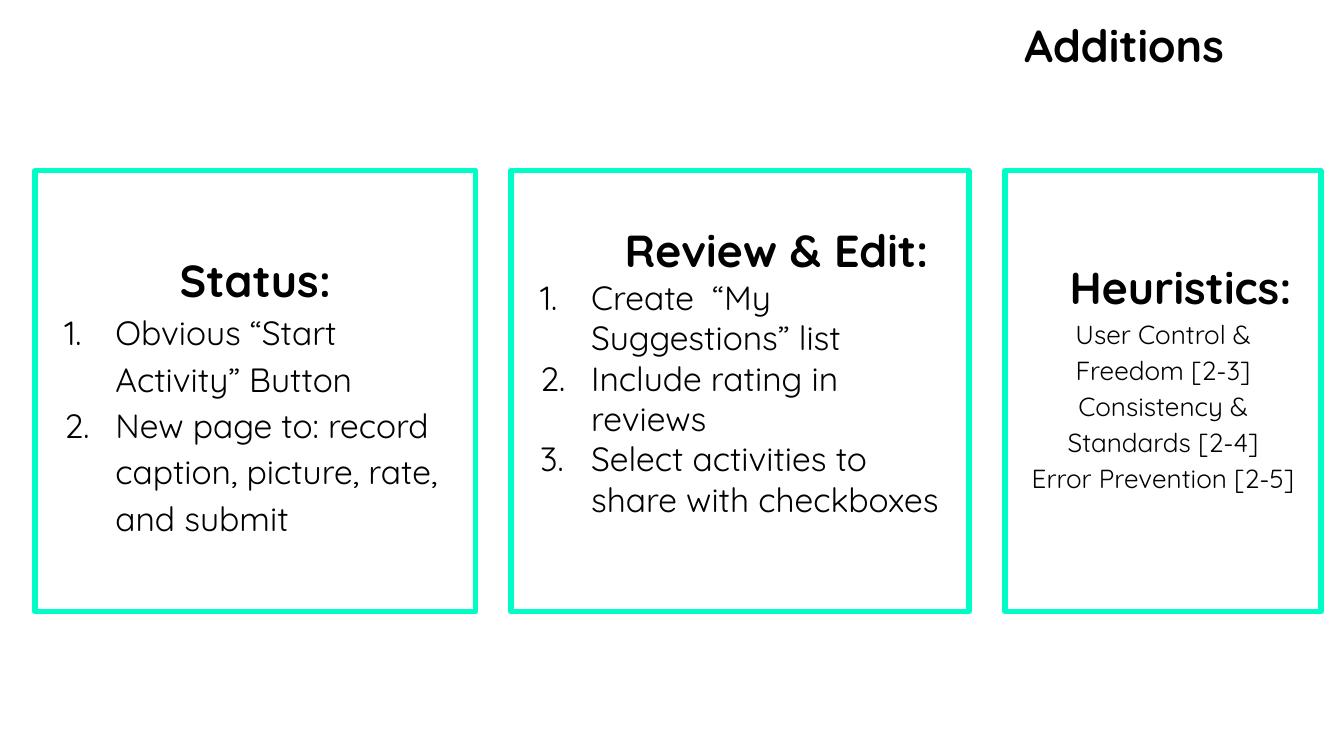
from lxml import etree
from pptx import Presentation
from pptx.dml.color import RGBColor
from pptx.enum.shapes import MSO_SHAPE
from pptx.enum.text import MSO_ANCHOR, MSO_AUTO_SIZE, PP_ALIGN
from pptx.oxml.ns import qn
from pptx.util import Inches, Pt

LEFT, CENTER = PP_ALIGN.LEFT, PP_ALIGN.CENTER
TOP, MIDDLE = MSO_ANCHOR.TOP, MSO_ANCHOR.MIDDLE
RECTANGLE = MSO_SHAPE.RECTANGLE
NO_AUTOFIT = MSO_AUTO_SIZE.NONE

SLIDE_WIDTH = 10
SLIDE_HEIGHT = SLIDE_WIDTH * 9 / 16
FONT, INK, ACCENT = "Quicksand", "000000", "00FDC8"
MARGIN = 0.1
CARD_TOP, CARD_HEIGHT = 1.27, 3.28
TITLE_BOX = (6.69, -0.03, 3.35, 1.61)
LIST_INDENT, LIST_HANGING = 0.5, -0.38

# Each card: left, width, line spacing, room under the text, heading, body
CARDS = [
    dict(left=0.26, width=3.28, spacing=1.15, room=0,
         heading="Status:", heading_format=dict(align=CENTER),
         body=["Obvious “Start Activity” Button",
               "New page to: record caption, picture, rate, and submit"],
         body_format=dict(size=18, numbered=True)),
    dict(left=3.8, width=3.41, spacing=1.0, room=0.3,
         heading="Review & Edit:", heading_format=dict(indent=0.75),
         body=["Create  “My Suggestions” list",
               "Include rating in reviews",
               "Select activities to share with checkboxes"],
         body_format=dict(size=18, numbered=True)),
    dict(left=7.48, width=2.35, spacing=1.15, room=0.27,
         heading="Heuristics:", heading_format=dict(indent=0.38),
         body=["User Control & Freedom [2-3]",
               "Consistency & Standards [2-4]",
               "Error Prevention [2-5]"],
         body_format=dict(size=14, align=CENTER)),
]


def color(hex_string):
    return RGBColor.from_string(hex_string)


def set_frame(frame, anchor, room=0):
    """Set margins and anchor; room is extra space under the text."""
    frame.word_wrap = True
    frame.auto_size = NO_AUTOFIT
    frame.vertical_anchor = anchor
    frame.margin_left = frame.margin_right = frame.margin_top = Inches(MARGIN)
    frame.margin_bottom = Inches(MARGIN + room)


def write(paragraph, text, size=24, bold=False, align=LEFT, spacing=1.15,
          indent=0, numbered=False):
    run = paragraph.add_run()
    run.text = text
    run.font.name = FONT
    run.font.size = Pt(size)
    run.font.bold = bold
    run.font.color.rgb = color(INK)
    paragraph.alignment = align
    paragraph.line_spacing = spacing
    paragraph.space_before = paragraph.space_after = Pt(0)
    properties = paragraph._p.get_or_add_pPr()
    first_line = LIST_HANGING if numbered else 0
    properties.set("marL", str(Inches(LIST_INDENT if numbered else indent)))
    properties.set("indent", str(Inches(first_line)))
    if numbered:
        etree.SubElement(properties, qn("a:buFont"), typeface=FONT)
        etree.SubElement(properties, qn("a:buAutoNum"), type="arabicPeriod")
    else:
        etree.SubElement(properties, qn("a:buNone"))


def add_title(slide, box, text):
    title = slide.shapes.title
    title.left, title.top, title.width, title.height = map(Inches, box)
    set_frame(title.text_frame, TOP)
    write(title.text_frame.paragraphs[0], text, bold=True, align=CENTER)


def add_card(slide, box, card):
    """Outlined box with a bold heading over its body lines."""
    shape = slide.shapes.add_shape(RECTANGLE, *map(Inches, box))
    shape.shadow.inherit = False
    shape.fill.background()
    shape.line.color.rgb = color(ACCENT)
    shape.line.width = Pt(3)
    etree.SubElement(shape.line._get_or_add_ln(), qn("a:round"))

    frame = shape.text_frame
    set_frame(frame, MIDDLE, card["room"])
    write(frame.paragraphs[0], card["heading"], bold=True,
          spacing=card["spacing"], **card["heading_format"])
    for line in card["body"]:
        write(frame.add_paragraph(), line, spacing=card["spacing"],
              **card["body_format"])


def main():
    presentation = Presentation()
    presentation.slide_width = Inches(SLIDE_WIDTH)
    presentation.slide_height = Inches(SLIDE_HEIGHT)
    title_only = presentation.slide_layouts.get_by_name("Title Only")
    slide = presentation.slides.add_slide(title_only)

    add_title(slide, TITLE_BOX, "Additions")
    for card in CARDS:
        box = (card["left"], CARD_TOP, card["width"], CARD_HEIGHT)
        add_card(slide, box, card)

    presentation.save("out.pptx")


if __name__ == "__main__":
    main()
